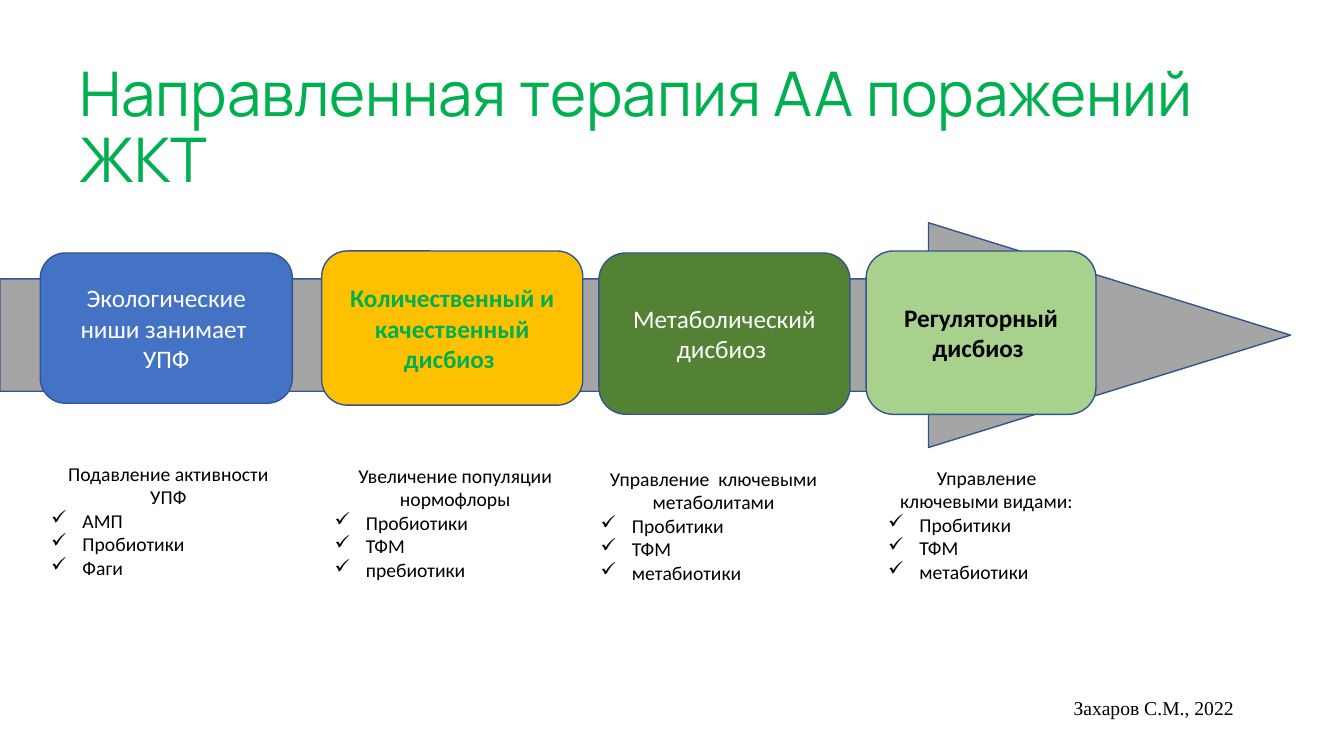
from lxml import etree
from pptx import Presentation
from pptx.dml.color import RGBColor
from pptx.enum.shapes import MSO_SHAPE
from pptx.enum.text import MSO_ANCHOR, MSO_AUTO_SIZE, PP_ALIGN
from pptx.oxml.ns import qn
from pptx.util import Inches, Pt

CENTER, LEFT = PP_ALIGN.CENTER, PP_ALIGN.LEFT
MIDDLE, TOP = MSO_ANCHOR.MIDDLE, MSO_ANCHOR.TOP
GROW = MSO_AUTO_SIZE.SHAPE_TO_FIT_TEXT
ARROW, ROUNDED = MSO_SHAPE.RIGHT_ARROW, MSO_SHAPE.ROUNDED_RECTANGLE

COLORS = {
    "green": "00B050", "gray": "A5A5A5", "outline": "325491", "blue": "4472C4",
    "amber": "FFC000", "forest": "548235", "mint": "A9D18E",
    "white": "FFFFFF", "black": "000000",
}
TITLE = "Направленная терапия АА поражений ЖКТ"
AUTHOR = "Захаров С.М., 2022"
BULLET_INDENT = 0.31
STAGES = [
    {"name": "Экологические ниши занимает  УПФ", "box": (0.4, 2.51, 2.5, 1.49),
     "fill": "blue", "color": "white", "bold": False,
     "notes_box": (0.41, 4.53, 2.52, 1.28), "goal": ["Подавление активности УПФ"],
     "means": ["АМП", "Пробиотики", "Фаги"]},
    {"name": "Количественный и качественный дисбиоз ", "box": (3.19, 2.49, 2.59, 1.53),
     "fill": "amber", "color": "green", "bold": True,
     "notes_box": (3.22, 4.55, 2.59, 1.28), "goal": ["Увеличение популяции нормофлоры"],
     "means": ["Пробиотики", "ТФМ", "пребиотики"]},
    {"name": "Метаболический дисбиоз ", "box": (5.94, 2.51, 2.49, 1.6),
     "fill": "forest", "color": "white", "bold": False,
     "notes_box": (5.86, 4.58, 2.48, 1.28), "goal": ["Управление  ключевыми ", "метаболитами "],
     "means": ["Пробитики", "ТФМ", "метабиотики"]},
    {"name": "Регуляторный дисбиоз ", "box": (8.59, 2.49, 2.28, 1.62),
     "fill": "mint", "color": "black", "bold": True,
     "notes_box": (8.71, 4.57, 2.15, 1.28), "goal": ["Управление ключевыми видами:"],
     "means": ["Пробитики", "ТФМ", "метабиотики"]},
]


def rgb(name):
    return RGBColor.from_string(COLORS[name])


def write(text_frame, lines, size, color="black", font="Calibri", align=LEFT, anchor=TOP, bold=False):
    text_frame.word_wrap = True
    text_frame.vertical_anchor = anchor
    text_frame.text = "\n".join(lines)
    for paragraph in text_frame.paragraphs:
        paragraph.alignment = align
        for run in paragraph.runs:
            run.font.size = Pt(size)
            run.font.name = font
            run.font.bold = bold
            run.font.color.rgb = rgb(color)


def add_text(slide, box, lines, size, **style):
    text_frame = slide.shapes.add_textbox(*map(Inches, box)).text_frame
    write(text_frame, lines, size, **style)
    return text_frame


def add_block(slide, preset, box, fill):
    shape = slide.shapes.add_shape(preset, *map(Inches, box))
    shape.shadow.inherit = False
    shape.fill.solid()
    shape.fill.fore_color.rgb = rgb(fill)
    shape.line.color.rgb = rgb("outline")
    shape.line.width = Pt(1)
    return shape


def add_check_mark(paragraph):
    paragraph.alignment = LEFT
    properties = paragraph._p.get_or_add_pPr()
    properties.set("marL", str(Inches(BULLET_INDENT)))
    properties.set("indent", str(-Inches(BULLET_INDENT)))
    etree.SubElement(properties, qn("a:buChar")).set("char", "✓")


def add_stage(slide, stage):
    block = add_block(slide, ROUNDED, stage["box"], stage["fill"])
    write(block.text_frame, [stage["name"]], 18, color=stage["color"],
          align=CENTER, anchor=MIDDLE, bold=stage["bold"])
    notes = add_text(slide, stage["notes_box"], stage["goal"] + stage["means"], 14, align=CENTER)
    notes.auto_size = GROW
    for paragraph in notes.paragraphs[len(stage["goal"]):]:
        add_check_mark(paragraph)


def main():
    """Build the slide on the stages of directed therapy."""
    presentation = Presentation()
    presentation.slide_width, presentation.slide_height = Inches(13.33), Inches(7.5)
    slide = presentation.slides.add_slide(presentation.slide_layouts[6])

    title = add_text(slide, (0.69, 0.56, 11.5, 1.45), [TITLE], 44,
                     color="green", font="Manrope", anchor=MIDDLE)
    title.paragraphs[0].line_spacing = 0.9

    arrow = add_block(slide, ARROW, (0, 2.21, 12.8, 2.23), "gray")
    arrow.adjustments[0], arrow.adjustments[1] = 0.5, 1.61
    for stage in STAGES:
        add_stage(slide, stage)

    author = add_text(slide, (10.55, 6.86, 1.85, 0.34), [AUTHOR], 14, font="Times New Roman")
    author.word_wrap = False
    author.auto_size = GROW
    presentation.save("out.pptx")


if __name__ == "__main__":
    main()
